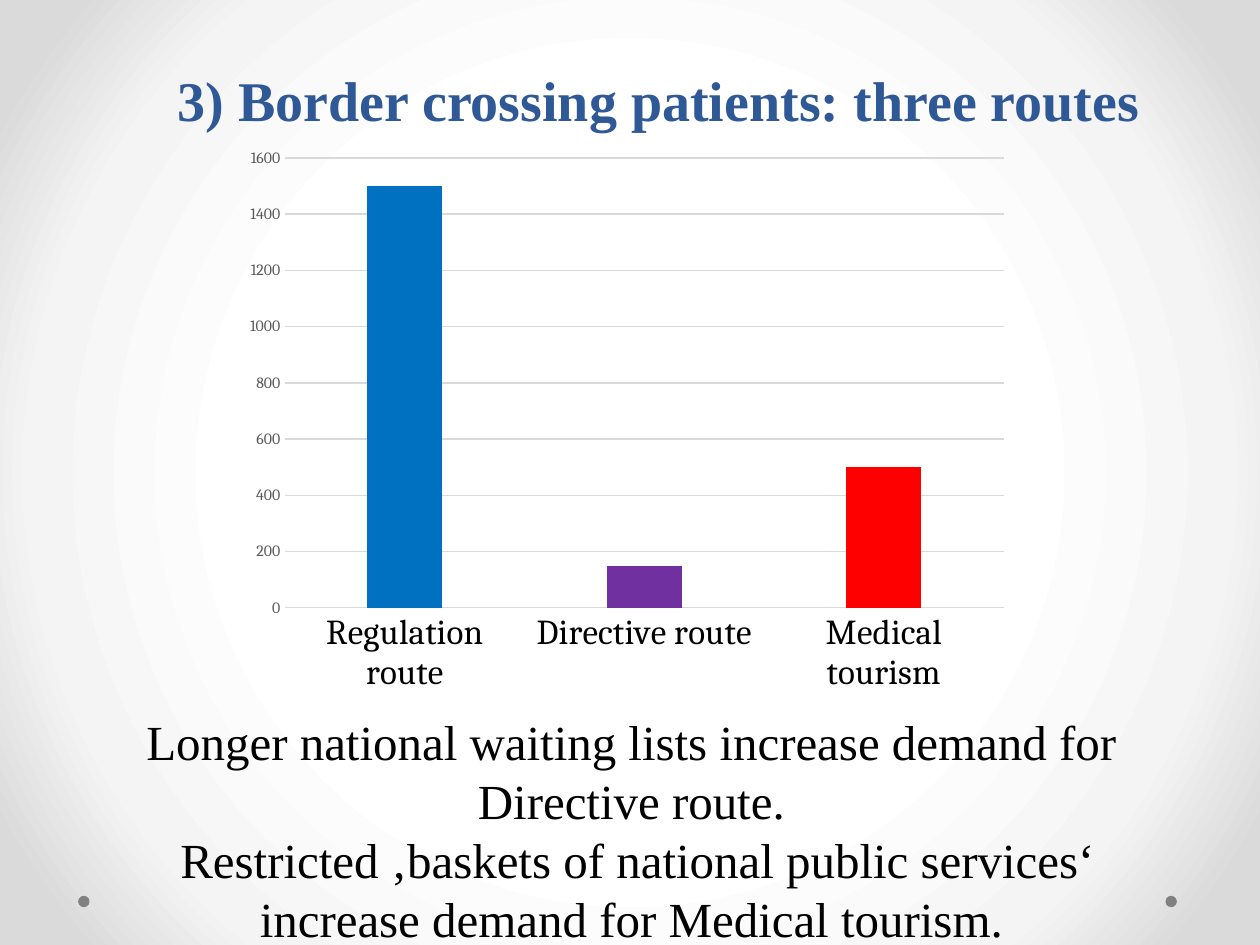
from pptx import Presentation
from pptx.chart.data import CategoryChartData
from pptx.dml.color import RGBColor
from pptx.enum.chart import XL_CHART_TYPE, XL_TICK_MARK
from pptx.enum.shapes import MSO_SHAPE
from pptx.enum.text import MSO_ANCHOR, MSO_AUTO_SIZE, PP_ALIGN
from pptx.oxml import parse_xml
from pptx.oxml.ns import nsdecls
from pptx.util import Inches, Pt

COLUMNS = XL_CHART_TYPE.COLUMN_CLUSTERED
NO_TICK = XL_TICK_MARK.NONE
ELLIPSE = MSO_SHAPE.OVAL
BOTTOM = MSO_ANCHOR.BOTTOM
GROW = MSO_AUTO_SIZE.SHAPE_TO_FIT_TEXT
NO_FIT = MSO_AUTO_SIZE.NONE
CENTER = PP_ALIGN.CENTER

BACKGROUND_STOPS = [(50, "FFFFFF"), (76, "F4F4F4"), (92, "DADADA")]
ROUTES = [("Regulation route", 1500, "0070C0"),
          ("Directive route", 150, "7030A0"),
          ("Medical tourism", 500, "FF0000")]
CONCLUSIONS = [
    "Longer national waiting lists increase demand for ",
    "Directive route. ",
    "Restricted ‚baskets of national public services‘ increase demand for Medical tourism. ",
]


def rgb(color):
    return RGBColor.from_string(color)


def set_font(font, name, size, color, bold=False):
    font.name, font.size, font.bold = name, Pt(size), bold
    font.color.rgb = rgb(color)


class SlideBuilder:
    text_font = "Times New Roman"
    chart_font = "Cambria"
    black, title_blue, dot_gray = "000000", "2F5897", "808080"
    label_gray, line_gray, series_blue = "595959", "D9D9D9", "6076B4"

    def __init__(self, deck):
        title_only = deck.slide_layouts[5]
        self.slide = deck.slides.add_slide(title_only)

    def background(self, stops):
        """Fill the background with a circular gradient from the centre."""
        stop_xml = "".join(
            f'<a:gs pos="{position * 1000}"><a:srgbClr val="{color}"/></a:gs>'
            for position, color in stops)
        gradient = parse_xml(
            f'<p:bg {nsdecls("p", "a")}><p:bgPr><a:gradFill rotWithShape="1">'
            f'<a:gsLst>{stop_xml}</a:gsLst><a:path path="circle">'
            '<a:fillToRect l="50000" t="50000" r="50000" b="50000"/></a:path>'
            '</a:gradFill><a:effectLst/></p:bgPr></p:bg>')
        self.slide.element.cSld.insert(0, gradient)

    def dot(self, left, top, size):
        shape = self.slide.shapes.add_shape(
            ELLIPSE, Inches(left), Inches(top), Inches(size), Inches(size))
        shape.shadow.inherit = False
        shape.fill.solid()
        shape.fill.fore_color.rgb = rgb(self.dot_gray)
        shape.line.fill.background()

    def title(self, text, left, top, width, height):
        title = self.slide.shapes.title
        title.left, title.top = Inches(left), Inches(top)
        title.width, title.height = Inches(width), Inches(height)
        frame = title.text_frame
        frame.text = text
        frame.word_wrap = True
        frame.auto_size = NO_FIT
        frame.vertical_anchor = BOTTOM
        para = frame.paragraphs[0]
        para.alignment = CENTER
        para.line_spacing = Pt(58)
        set_font(para.runs[0].font, self.text_font, 32, self.title_blue, True)

    def column_chart(self, routes, left, top, width, height):
        names, values, colors = zip(*routes)
        data = CategoryChartData()
        data.categories = names
        data.add_series("Series 1", values)
        chart = self.slide.shapes.add_chart(
            COLUMNS, Inches(left), Inches(top), Inches(width), Inches(height), data).chart
        chart.has_title = chart.has_legend = False
        set_font(chart.font, self.chart_font, 10, self.black)

        plot = chart.plots[0]
        plot.gap_width, plot.overlap = 219, -27
        plot.vary_by_categories = False
        series = plot.series[0]
        series.format.fill.solid()
        series.format.fill.fore_color.rgb = rgb(self.series_blue)
        for index, color in enumerate(colors):
            fill = series.points[index].format.fill
            fill.solid()
            fill.fore_color.rgb = rgb(color)

        categories, scale = chart.category_axis, chart.value_axis
        scale.minimum_scale, scale.maximum_scale, scale.major_unit = 0, 1600, 200
        for axis, size, color in ((categories, 20, self.black),
                                  (scale, 9, self.label_gray)):
            axis.major_tick_mark = axis.minor_tick_mark = NO_TICK
            set_font(axis.tick_labels.font, self.chart_font, size, color)
        scale.format.line.fill.background()
        for line in (categories.format.line, scale.major_gridlines.format.line):
            line.color.rgb = rgb(self.line_gray)
            line.width = Pt(0.75)

    def text(self, lines, left, top, width, height):
        box = self.slide.shapes.add_textbox(
            Inches(left), Inches(top), Inches(width), Inches(height))
        frame = box.text_frame
        frame.word_wrap = True
        frame.auto_size = GROW
        frame.text = "\n".join(lines)
        for para in frame.paragraphs:
            para.alignment = CENTER
            set_font(para.runs[0].font, self.text_font, 28, self.black)


def main():
    deck = Presentation()
    deck.slide_width, deck.slide_height = Inches(10), Inches(7.5)
    page = SlideBuilder(deck)
    page.background(BACKGROUND_STOPS)
    for left in (9.25, 0.62):
        page.dot(left, 7.11, 0.09)
    page.title("3) Border crossing patients: three routes", 1, 0.12, 8.46, 0.98)
    page.column_chart(ROUTES, 1.86, 1.09, 6.23, 4.51)
    page.text(CONCLUSIONS, 0.66, 5.6, 8.8, 1.99)
    deck.save("out.pptx")


if __name__ == "__main__":
    main()
